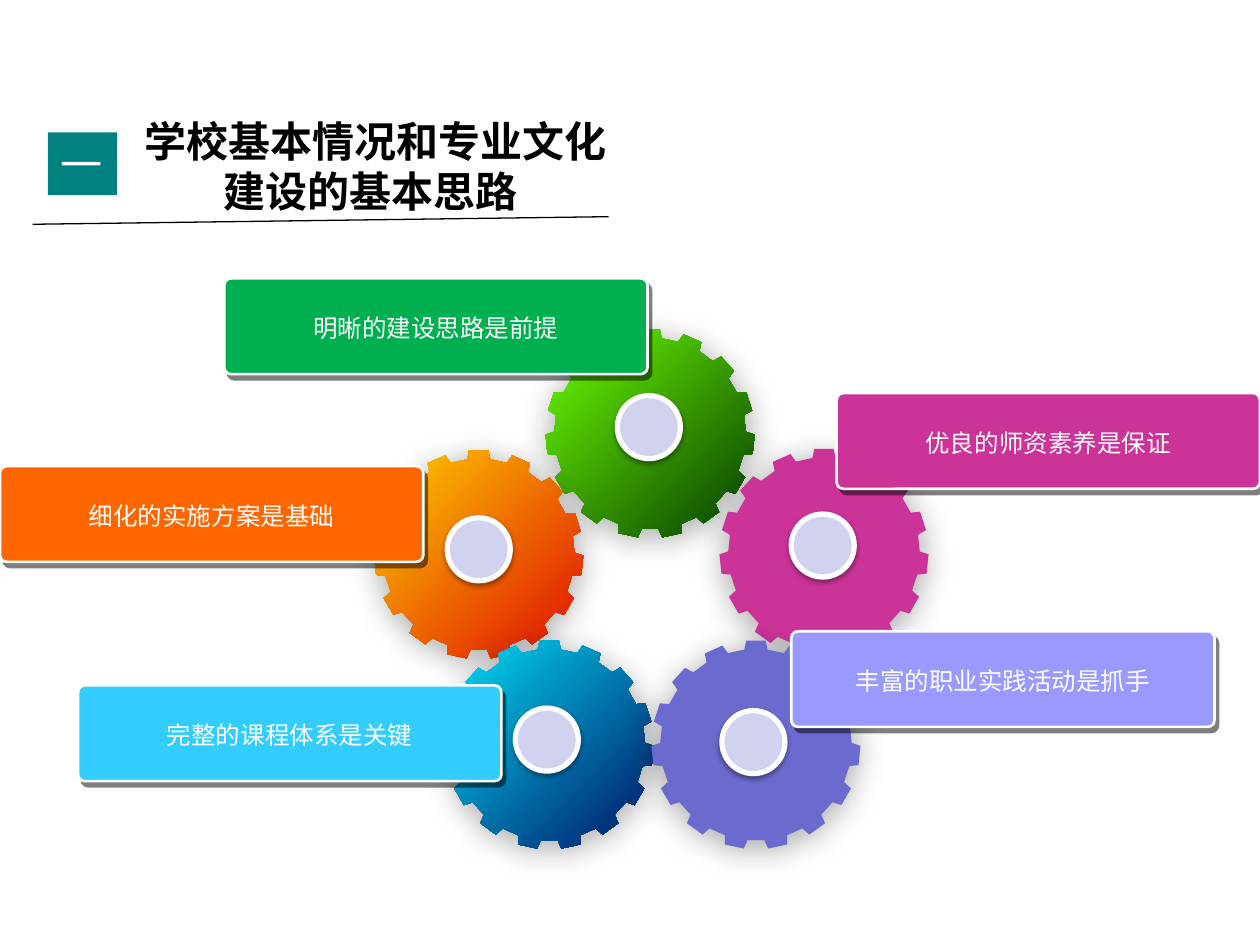
from math import cos, radians, sin

from lxml import etree
from pptx import Presentation
from pptx.dml.color import RGBColor
from pptx.enum.shapes import MSO_CONNECTOR, MSO_SHAPE
from pptx.enum.text import MSO_ANCHOR, PP_ALIGN
from pptx.oxml.ns import qn
from pptx.util import Inches, Pt

RECTANGLE = MSO_SHAPE.RECTANGLE
ROUNDED = MSO_SHAPE.ROUNDED_RECTANGLE
OVAL = MSO_SHAPE.OVAL
STRAIGHT = MSO_CONNECTOR.STRAIGHT
MIDDLE = MSO_ANCHOR.MIDDLE
LEFT, CENTER = PP_ALIGN.LEFT, PP_ALIGN.CENTER

CJK_FONT = "Noto Sans CJK SC"
TEETH = 15
TOOTH_PROFILE = [(-7, 0.76), (-5.3, 0.83), (5.3, 0.83), (7, 0.76)]
HUB_SIZE = 0.5
LABEL_WIDTH, LABEL_HEIGHT = 3.36, 0.76

# centre x, centre y, colours, hub left, hub top
GEARS = [
    (5.16, 3.44, ["6EFF01", "0F5000"], 4.9, 3.14),
    (3.8, 4.4, ["FFCF01", "E22000"], 3.55, 4.11),
    (4.36, 5.91, ["00DFF6", "002774"], 4.09, 5.62),
    (6.54, 4.39, ["CC3399"], 6.28, 4.08),
    (6, 5.91, ["6B6BCF"], 5.73, 5.64),
]

# left, top, colour, wording, text width
LABELS = [
    (1.78, 2.21, "00B050", "明晰的建设思路是前提", 2.97),
    (6.64, 3.12, "CC3399", "优良的师资素养是保证", 2.97),
    (0, 3.7, "FF6600", "细化的实施方案是基础", 2.97),
    (0.62, 5.44, "33CCFF", "完整的课程体系是关键", 2.97),
    (6.28, 5.01, "9999FF", "丰富的职业实践活动是抓手", 3.17),
]


def color(hex_code):
    """Return the colour for a hex string."""
    return RGBColor.from_string(hex_code)


def paint(shape, fills, line=None, line_width=0):
    """Fill a shape with one colour or a diagonal gradient, and set its outline."""
    shape.shadow.inherit = False
    if len(fills) == 1:
        shape.fill.solid()
        shape.fill.fore_color.rgb = color(fills[0])
    else:
        shape.fill.gradient()
        shape.fill.gradient_angle = 315
        for stop, position, shade in zip(shape.fill.gradient_stops, (0, 0.9), fills):
            stop.position = position
            stop.color.rgb = color(shade)
    if line:
        shape.line.color.rgb = color(line)
        shape.line.width = Pt(line_width)
    else:
        shape.line.fill.background()


def cast_shadow(shape, opacity, blur, distance, angle):
    """Give a painted shape a black outer shadow."""
    effects = shape._element.spPr.find(qn("a:effectLst"))
    shadow = etree.SubElement(
        effects, qn("a:outerShdw"), blurRad=str(Pt(blur)), dist=str(Pt(distance)),
        dir=str(angle * 60000), algn="ctr", rotWithShape="0")
    black = etree.SubElement(shadow, qn("a:srgbClr"), val="000000")
    etree.SubElement(black, qn("a:alpha"), val=str(opacity * 1000))


def write(shape, text, size, shade, font=CJK_FONT, bold=False, align=CENTER,
          wrap=True, line_height=None):
    """Put one formatted paragraph in a shape."""
    frame = shape.text_frame
    frame.word_wrap = wrap
    frame.vertical_anchor = MIDDLE
    paragraph = frame.paragraphs[0]
    paragraph.alignment = align
    if line_height:
        paragraph.line_spacing = Pt(line_height)
    run = paragraph.add_run()
    run.text = text
    run.font.name = font
    run.font.size = Pt(size)
    run.font.bold = bold
    run.font.color.rgb = color(shade)
    etree.SubElement(run._r.get_or_add_rPr(), qn("a:ea"), typeface=font)


def add_gear(slide, center_x, center_y, fills):
    """Draw a toothed wheel around a centre."""
    outline = []
    for tooth in range(TEETH):
        for offset, radius in TOOTH_PROFILE:
            angle = radians(tooth * 360 / TEETH + offset)
            outline.append((Inches(center_x + radius * sin(angle)),
                            Inches(center_y - radius * cos(angle))))
    builder = slide.shapes.build_freeform(*outline[0])
    builder.add_line_segments(outline[1:], close=True)
    gear = builder.convert_to_shape()
    paint(gear, fills)
    cast_shadow(gear, 33, 17.8, 3, 87)


def add_hub(slide, left, top):
    """Draw the round hub of a gear."""
    hub = slide.shapes.add_shape(
        OVAL, Inches(left), Inches(top), Inches(HUB_SIZE), Inches(HUB_SIZE))
    paint(hub, ["D1D1F0"], "FFFFFF", 3)
    cast_shadow(hub, 38, 3.1, 1.6, 90)


def add_label(slide, left, top, shade, wording, text_width):
    """Draw a rounded plate with its wording centred on it."""
    plate = slide.shapes.add_shape(
        ROUNDED, Inches(left), Inches(top), Inches(LABEL_WIDTH), Inches(LABEL_HEIGHT))
    plate.adjustments[0] = 0.071
    paint(plate, [shade], "FFFFFF", 1.5)
    cast_shadow(plate, 50, 0, 3.6, 56)
    caption = slide.shapes.add_textbox(
        Inches(left + (LABEL_WIDTH - text_width) / 2), Inches(top + 0.22),
        Inches(text_width), Inches(0.34))
    write(caption, wording, 14, "FFFFFF", wrap=False)


def add_heading(slide, left, top):
    """Draw the section number, the title and the rule below them."""
    number = slide.shapes.add_shape(
        RECTANGLE, Inches(left + 0.12), Inches(top + 0.19), Inches(0.55), Inches(0.5))
    paint(number, ["008080"])
    write(number, "一", 24, "FFFFFF", font="Arial", align=LEFT)
    rule = slide.shapes.add_connector(
        STRAIGHT, Inches(left), Inches(top + 0.92), Inches(left + 4.57), Inches(top + 0.86))
    rule.line.color.rgb = color("000000")
    rule.line.width = Pt(0.75)
    etree.SubElement(rule._element.spPr, qn("a:effectLst"))
    title = slide.shapes.add_textbox(
        Inches(left + 0.7), Inches(top), Inches(4.04), Inches(0.91))
    write(title, "学校基本情况和专业文化建设的基本思路 ", 24, "000000",
          bold=True, line_height=28.8)


def main():
    """Build the slide and save it."""
    deck = Presentation()
    deck.slide_width, deck.slide_height = Inches(10), Inches(7.5)
    slide = deck.slides.add_slide(deck.slide_layouts[6])
    for center_x, center_y, fills, _, _ in GEARS:
        add_gear(slide, center_x, center_y, fills)
    for _, _, _, hub_left, hub_top in GEARS:
        add_hub(slide, hub_left, hub_top)
    for label in LABELS:
        add_label(slide, *label)
    add_heading(slide, 0.26, 0.86)
    deck.save("out.pptx")


if __name__ == "__main__":
    main()
